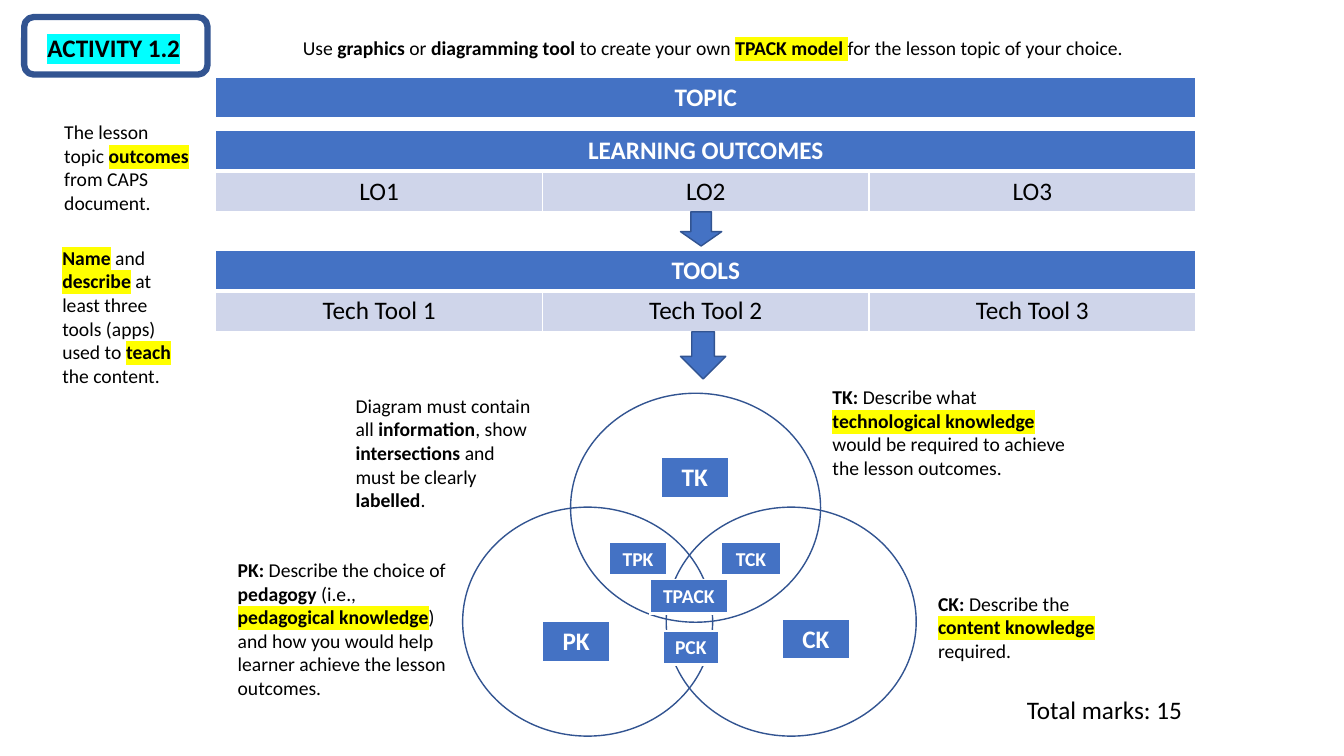
import pptx
import pptx.dml.color
import pptx.enum.shapes
import pptx.enum.text
import pptx.oxml
import pptx.oxml.ns
import pptx.util

Cm = pptx.util.Cm
Pt = pptx.util.Pt
SHAPE = pptx.enum.shapes.MSO_SHAPE
ALIGN = pptx.enum.text.PP_ALIGN

BLUE, OUTLINE, PALE = "4472C4", "325491", "CFD5EA"
WHITE, BLACK, YELLOW, CYAN = "FFFFFF", "000000", "FFFF00", "00FFFF"
BOLD = {"bold": True}
MARK = {"bold": True, "highlight": YELLOW}
ROW = 1.03


def rgb(value):
    return pptx.dml.color.RGBColor.from_string(value)


def xml(tag, body, attrs=""):
    return pptx.oxml.parse_xml(
        f'<a:{tag} {pptx.oxml.ns.nsdecls("a")} {attrs}>{body}</a:{tag}>')


def add_text(p, text, size=14, color=BLACK, bold=False, highlight=None, align=None):
    r = p.add_run()
    r.text = text
    r.font.size = Pt(size)
    r.font.bold = bold
    r.font.color.rgb = rgb(color)
    if highlight:
        r.font._element.append(xml("highlight", f'<a:srgbClr val="{highlight}"/>'))
    r.font.name = "Calibri"
    if align is not None:
        p.alignment = align


def add_note(s, box, runs, **fmt):
    sp = s.shapes.add_textbox(*map(Cm, box))
    tf = sp.text_frame
    tf.word_wrap = True
    for text, style in runs:
        add_text(tf.paragraphs[0], text, **fmt, **style)


def add_outline(s, kind, box, width=1, fill=None):
    sp = s.shapes.add_shape(kind, *map(Cm, box))
    sp.shadow.inherit = False
    if fill:
        sp.fill.solid()
        sp.fill.fore_color.rgb = rgb(fill)
    else:
        sp.fill.background()
    sp.line.color.rgb = rgb(OUTLINE)
    sp.line.width = Pt(width)
    return sp


def style_cell(cell, text, header, size):
    tc_pr = cell._tc.get_or_add_tcPr()
    for side in "LRTB":
        width = Pt(3 if header and side == "B" else 1)
        tc_pr.append(xml(f"ln{side}",
                         f'<a:solidFill><a:srgbClr val="{WHITE}"/></a:solidFill>',
                         f'w="{width}"'))
    cell.fill.solid()
    cell.fill.fore_color.rgb = rgb(BLUE if header else PALE)
    if text:
        add_text(cell.text_frame.paragraphs[0], text, size=size, bold=header,
                 color=WHITE if header else BLACK, align=ALIGN.CENTER)


def add_band(s, left, top, width, heading, items=(), height=ROW, size=18):
    """A blue heading row, over one row of items if there are any."""
    rows, cols = (2, len(items)) if items else (1, 1)
    table = s.shapes.add_table(rows, cols, Cm(left), Cm(top),
                               Cm(width), Cm(height * rows)).table
    table.horz_banding = False
    for column in table.columns:
        column.width = Cm(width / cols)
    for row in table.rows:
        row.height = Cm(height)
    for i in range(cols):
        style_cell(table.cell(0, i), "" if i else heading, True, size)
    for i, item in enumerate(items):
        style_cell(table.cell(1, i), item, False, size)
    if cols > 1:
        table.cell(0, 0).merge(table.cell(0, cols - 1))


def build_header(s, box):
    left, top, width, height = box
    # Activity badge
    title = s.shapes.title
    title.left, title.top, title.width, title.height = map(
        Cm, (left + 0.33, top + 0.26, 3.99, 1.02))
    tf = title.text_frame
    tf.auto_size = pptx.enum.text.MSO_AUTO_SIZE.NONE
    tf.vertical_anchor = pptx.enum.text.MSO_ANCHOR.TOP
    add_text(tf.paragraphs[0], "ACTIVITY 1.2", size=18, bold=True,
             highlight=CYAN, align=ALIGN.LEFT)
    add_outline(s, SHAPE.ROUNDED_RECTANGLE, (left, top, 4.62, height), 4.5)
    # Instruction
    add_note(s, (left + 2.74, top + 0.36, width - 2.74, 0.86), [
        ("Use ", {}), ("graphics", BOLD), (" or ", {}), ("diagramming tool ", BOLD),
        ("to create your own ", {}), ("TPACK model ", MARK),
        ("for the lesson topic of your choice.", {})], align=ALIGN.CENTER)


def build_level(s, box, heading, items, arrow_size, head, note, note_box):
    """A band of three items with a side note and an arrow to the next level."""
    left, top, width, height = box
    add_band(s, left, top, width, heading, items)
    arrow = add_outline(s, SHAPE.DOWN_ARROW,
                        (left + 11.71, top + height, *arrow_size), fill=BLUE)
    arrow.adjustments[1] = head
    dx, dy, w, h = note_box
    add_note(s, (left + dx, top + dy, w, h), note)


def build_diagram(s, box):
    left, top, width, height = box
    # Overlapping circles
    for x, y in [(5.92, 3.2), (11.05, 3.2), (8.64, 0.33)]:
        add_outline(s, SHAPE.OVAL, (left + x, top + y, 6.3, 5.77))
    # Knowledge areas and their intersections
    areas = [("TK", 10.92, 1.95), ("CK", 13.97, 6.02), ("PK", 7.93, 6.09)]
    for name, x, y in areas:
        add_band(s, left + x, top + y, 1.7, name)
    overlaps = [("PCK", 10.97, 6.32, 1.4), ("TCK", 12.45, 4.09, 1.47),
                ("TPK", 9.63, 4.09, 1.42), ("TPACK", 10.64, 5.03, 1.96)]
    for name, x, y, w in overlaps:
        add_band(s, left + x, top + y, w, name, height=0.84, size=14)
    # Notes around the circles
    notes = [
        (14.99, 0, 6.81, 2.64, [
            ("TK: ", BOLD), ("Describe what ", {}), ("technological knowledge", MARK),
            (" would be required to achieve the lesson outcomes.", {})]),
        (17.65, 5.2, 5.26, 2.06, [
            ("CK: ", BOLD), ("Describe the ", {}), ("content knowledge ", MARK),
            ("required.", {})]),
        (0, 4.36, 5.82, 3.84, [
            ("PK: ", BOLD), ("Describe the choice of ", {}), ("pedagogy ", BOLD),
            ("(i.e., ", {}), ("pedagogical knowledge", MARK),
            (") and how you would help learner achieve the lesson outcomes.", {})]),
        (2.97, 0.22, 4.98, 3.25, [
            ("Diagram must contain all ", {}), ("information", BOLD), (", show ", {}),
            ("intersections", BOLD), (" and must be clearly ", {}),
            ("labelled", BOLD), (".", {})]),
    ]
    for x, y, w, h, runs in notes:
        add_note(s, (left + x, top + y, w, h), runs)
    # Marks
    add_note(s, (left + 19.89, top + 7.79, 4.45, 1.02),
             [("Total marks: 15", {})], size=18)


def main():
    prs = pptx.Presentation()
    prs.slide_width, prs.slide_height = Cm(33.87), Cm(19.05)
    s = prs.slides.add_slide(prs.slide_layouts[5])

    build_header(s, (0.61, 0.43, 31.98, 1.45))
    band_left, band_width = 5.44, 24.69
    add_band(s, band_left, 1.96, band_width, "TOPIC")
    build_level(s, (band_left, 3.28, band_width, 2 * ROW), "LEARNING OUTCOMES",
                [f"LO{n}" for n in (1, 2, 3)], (1.04, 0.86), 0.42,
                [("The lesson topic ", {}), ("outcomes", MARK),
                 (" from CAPS document.", {})], (-4.07, -0.38, 3.68, 2.64))
    build_level(s, (band_left, 6.3, band_width, 2 * ROW), "TOOLS",
                [f"Tech Tool {n}" for n in (1, 2, 3)], (1.14, 1.19), 0.5,
                [("Name", MARK), (" and ", {}), ("describe", MARK),
                 (" at least three tools (apps) used to ", {}), ("teach", MARK),
                 (" the content.", {})], (-4.12, -0.23, 3.68, 3.84))
    build_diagram(s, (5.74, 9.58, 24.34, 8.97))
    prs.save("out.pptx")


if __name__ == "__main__":
    main()
